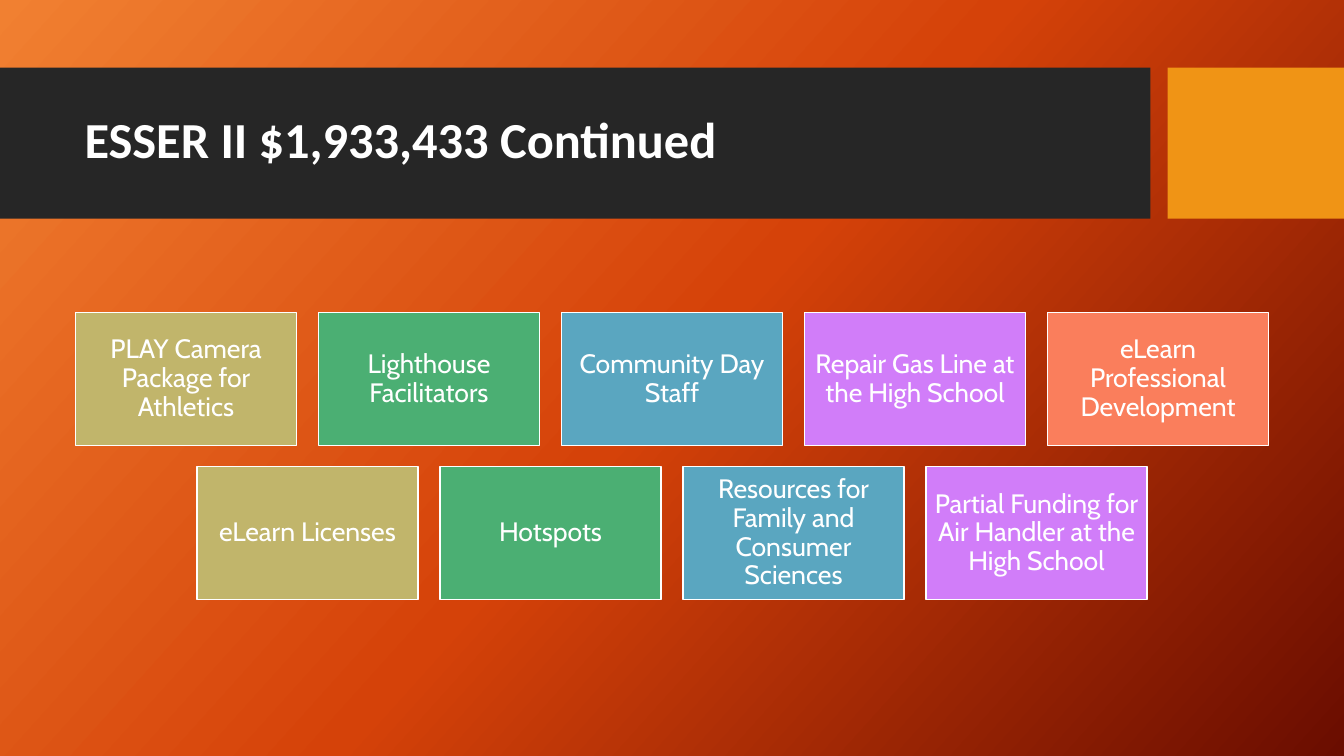
from copy import deepcopy
from dataclasses import dataclass

from pptx import Presentation
from pptx.dml.color import RGBColor
from pptx.enum import shapes, text
from pptx.oxml import ns
from pptx.util import Inches, Pt


@dataclass(frozen=True)
class Theme:
    gradient: tuple = ((0, "F18031"), (0.5, "D54209"), (1, "6A0D00"))
    band: str = "262626"
    accent: str = "F09415"
    white: str = "FFFFFF"
    tiles: tuple = ("C1B56B", "4BAF73", "5AA6C0", "D17DF9", "FA7E5C")
    title_font: str = "Calibri"
    body_font: str = "Cabin"
    title_size: int = 36
    body_size: int = 19


theme = Theme()
SLIDE_W = 13.33
TILE_W, TILE_H, GAP = 2.19, 1.32, 0.22
TILES_TOP, ROW_STEP = 3.1, 1.53

prs = Presentation()
prs.slide_width, prs.slide_height = Inches(SLIDE_W), Inches(7.5)
s = prs.slides.add_slide(prs.slide_layouts[6])


def add_rect(x, y, w, h, color):
    sp = s.shapes.add_shape(shapes.MSO_SHAPE.RECTANGLE,
                            Inches(x), Inches(y), Inches(w), Inches(h))
    sp.shadow.inherit = False
    sp.fill.solid()
    sp.fill.fore_color.rgb = RGBColor.from_string(color)
    sp.line.fill.background()
    return sp


def write(sp, content, *, font, size, align, bold=False, inset=None):
    tf = sp.text_frame
    tf.word_wrap = True
    tf.vertical_anchor = text.MSO_ANCHOR.MIDDLE
    if inset is not None:
        tf.margin_left = tf.margin_right = Inches(inset)
        tf.margin_top = tf.margin_bottom = Inches(inset)
    p = tf.paragraphs[0]
    p.alignment = align
    p.line_spacing = 0.9
    r = p.add_run()
    r.text = content
    r.font.name = font
    r.font.size = Pt(size)
    r.font.bold = bold
    r.font.color.rgb = RGBColor.from_string(theme.white)


fill = s.background.fill
fill.gradient()
fill.gradient_angle = 318
stop_list = next(s.element.iter(ns.qn("a:gsLst")))
stop_list.append(deepcopy(stop_list[-1]))
for stop, (position, color) in zip(fill.gradient_stops, theme.gradient):
    stop.position = position
    stop.color.rgb = RGBColor.from_string(color)

add_rect(0, 0.67, 11.41, 1.5, theme.band)
add_rect(11.58, 0.67, 1.75, 1.5, theme.accent)

title = s.shapes.add_textbox(Inches(0.74), Inches(0.82), Inches(10.51), Inches(1.18))
write(title, "ESSER II $1,933,433 Continued", font=theme.title_font,
      size=theme.title_size, align=text.PP_ALIGN.LEFT, bold=True)

rows = [
    ["PLAY Camera Package for Athletics", "Lighthouse Facilitators",
     "Community Day Staff", "Repair Gas Line at the High School",
     "eLearn Professional Development"],
    ["eLearn Licenses", "Hotspots", "Resources for Family and Consumer Sciences",
     "Partial Funding for Air Handler at the High School"],
]
for i, labels in enumerate(rows):
    row_width = len(labels) * (TILE_W + GAP) - GAP
    left = (SLIDE_W - row_width) / 2
    for j, (label, color) in enumerate(zip(labels, theme.tiles)):
        tile = add_rect(left + j * (TILE_W + GAP), TILES_TOP + i * ROW_STEP,
                        TILE_W, TILE_H, color)
        tile.line.color.rgb = RGBColor.from_string(theme.white)
        tile.line.width = Pt(1)
        write(tile, label, font=theme.body_font, size=theme.body_size,
              align=text.PP_ALIGN.CENTER, inset=0.08)

prs.save("out.pptx")
